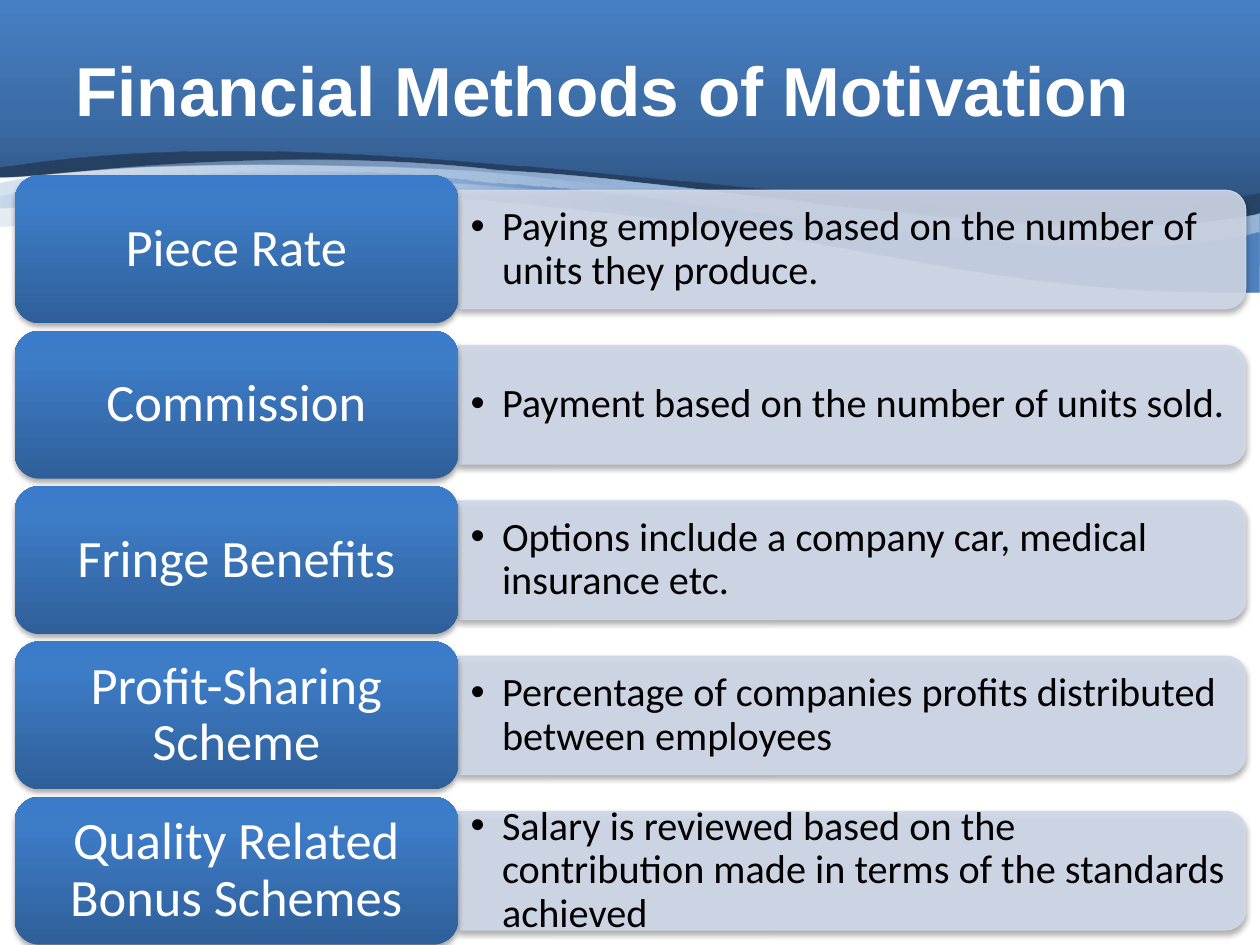
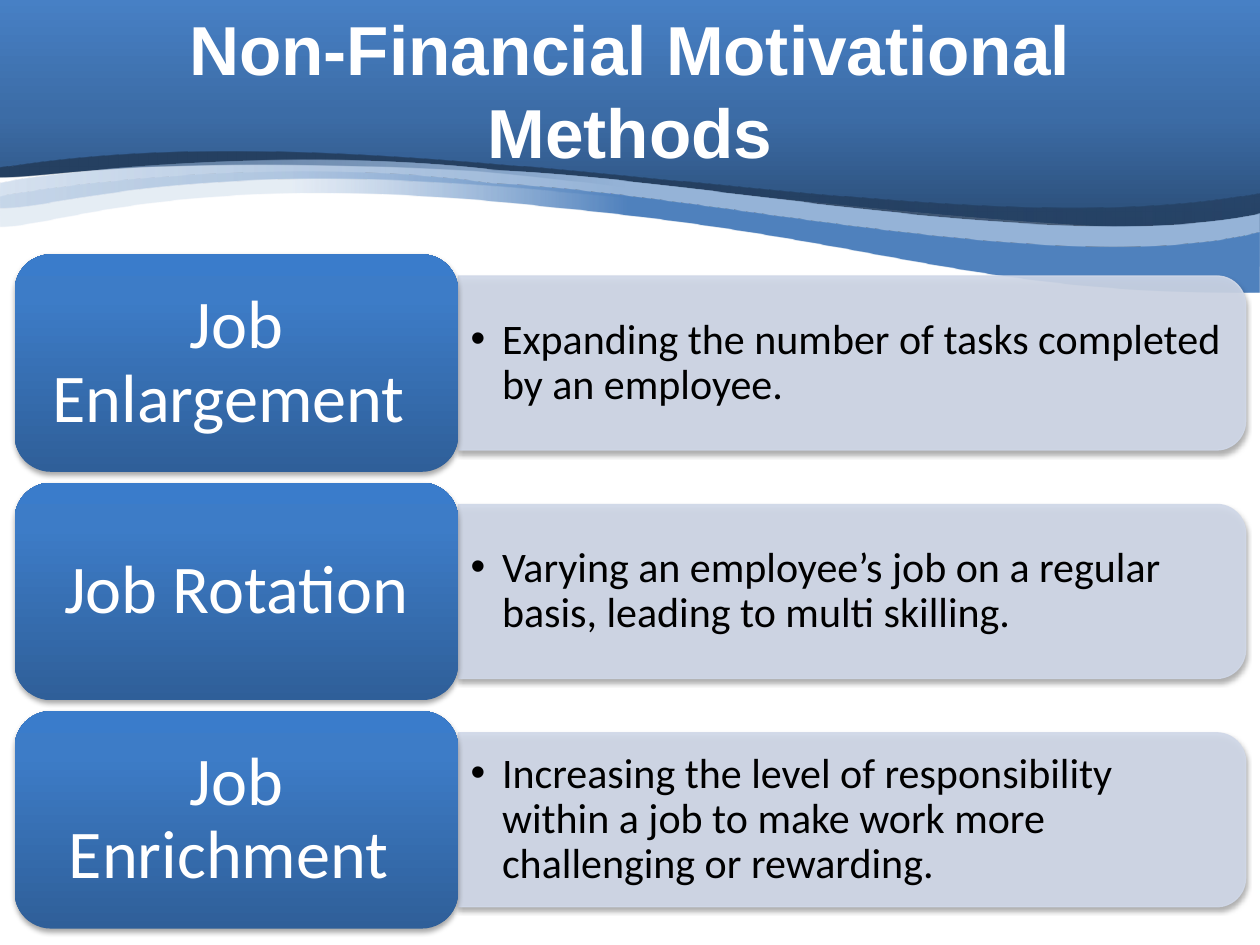
import lxml.etree
import pptx
import pptx.dml.color
import pptx.enum.shapes
import pptx.enum.text
import pptx.oxml.ns
import pptx.util

Pt = pptx.util.Pt
qn = pptx.oxml.ns.qn
MSO = pptx.enum.shapes.MSO_SHAPE
ALIGN = pptx.enum.text.PP_ALIGN

WHITE, BLACK, PALE = "FFFFFF", "000000", "D0D8E8"
LEFT, LABEL_W, PANEL_W = 8.4, 253.4, 450
GLOSS = [(0, "2F5F99", 100), (80, "3D7CC7", 100), (100, "3A7CCB", 100)]

WAVES = [
    ([(-1, -1), (720, -1), (720, 132), (480, 132, 207, 66, -1, 96)],
     [(0, "2A4C75", 100), (50, "3C6CA6", 100), (100, "4780C5", 100)], 270),
    ([(722, 110), (722, 132), (561, 153, 452, 113, 271, 98),
      (87, 88, 34, 101.5, 0, 101.5), (0, 96), (230, 60, 538, 145, 722, 110)],
     [(0, "254061", 75), (50, "254061", 100), (100, "254061", 100)], 180),
    ([(720, 121.7), (720, 152), (557, 153.4, 499, 124, 318, 109.4),
      (109, 88.6, 34, 119.5, 0, 118.8), (0, 118, -0.7, 114, 0, 104.4),
      (33, 98, 166, 83, 282, 97), (402, 102, 608, 146, 720, 121.7)],
     [(0, "95B3D7", 100), (50, "95B3D7", 100), (100, "95B3D7", 38)], 180),
    ([(720, 132.5), (720, 167), (557, 168.5, 499, 135.4, 318, 118.8),
      (109, 95, 34, 129.6, 0, 129.6), (0, 128, -0.7, 124, 0, 112.3),
      (33, 106, 166, 88.6, 282, 105), (402, 110, 608, 160.6, 720, 132.5)],
     [(0, "4F81BD", 100), (50, "4F81BD", 100), (77, "95B3D7", 23)], 180),
]

PAY = [
    ("Piece Rate", "Paying employees based on the number of units they produce."),
    ("Commission", "Payment based on the number of units sold."),
    ("Fringe Benefits", "Options include a company car, medical insurance etc."),
    ("Profit-Sharing Scheme",
     "Percentage of companies profits distributed between employees"),
    ("Quality Related Bonus Schemes",
     "Salary is reviewed based on the contribution made in terms of the "
     "standards achieved"),
]
JOBS = [
    ("Job Enlargement ", "Expanding the number of tasks completed by an employee."),
    ("Job Rotation",
     "Varying an employee’s job on a regular basis, leading to multi skilling."),
    ("Job Enrichment ",
     "Increasing the level of responsibility within a job to make work more "
     "challenging or rewarding."),
]


def hue(code):
    """Turn a hex string into a colour."""
    return pptx.dml.color.RGBColor.from_string(code)


def node(parent, tag, **attrs):
    """Add a drawing element with the given attributes."""
    texts = {key: str(value) for key, value in attrs.items()}
    return lxml.etree.SubElement(parent, qn(tag), texts)


def fade(parent, code, alpha):
    """Add a colour element with its opacity in percent."""
    node(node(parent, "a:srgbClr", val=code), "a:alpha", val=alpha * 1000)


def blend(shape, stops, angle):
    """Fill a shape with a linear gradient and no outline."""
    shape.line.fill.background()
    shape.fill.background()
    props = shape._element.spPr
    grad = lxml.etree.Element(qn("a:gradFill"), rotWithShape="1")
    marks = node(grad, "a:gsLst")
    for place, code, alpha in stops:
        fade(node(marks, "a:gs", pos=place * 1000), code, alpha)
    node(grad, "a:lin", ang=angle * 60000, scaled=0)
    props.replace(props.find(qn("a:noFill")), grad)


def shade(shape):
    """Give a shape a soft shadow below it."""
    shape.shadow.inherit = False
    effect = shape._element.spPr.find(qn("a:effectLst"))
    outer = node(effect, "a:outerShdw", blurRad=Pt(3.1), dist=Pt(1.8),
                 dir=5400000, rotWithShape=0)
    fade(outer, BLACK, 35)


def bend(shape, parts):
    """Turn the six-number parts of a freeform into cubic curves."""
    lines = list(shape._element.spPr.iter(qn("a:lnTo")))
    for line, part in zip(lines, parts):
        if len(part) == 6:
            curve = lxml.etree.Element(qn("a:cubicBezTo"))
            for x, y in zip(part[::2], part[1::2]):
                node(curve, "a:pt", x=Pt(x) - shape.left, y=Pt(y) - shape.top)
            line.getparent().replace(line, curve)


def wave(slide, outline, stops, angle):
    """Draw one wave and return it."""
    first, *parts = outline
    pen = slide.shapes.build_freeform(Pt(first[0]), Pt(first[1]))
    pen.add_line_segments([(Pt(part[-2]), Pt(part[-1])) for part in parts],
                          close=True)
    shape = pen.convert_to_shape()
    bend(shape, parts)
    shape.shadow.inherit = False
    blend(shape, stops, angle)
    return shape


def header(slide):
    """Draw the waves and move them to the layout that the slides share."""
    layout = slide.slide_layout
    for holder in list(layout.placeholders):
        holder._element.getparent().remove(holder._element)
    for shape in [wave(slide, *item) for item in WAVES]:
        layout.shapes._spTree.append(shape._element)


def write(shape, text, size, code, face="Calibri", align=ALIGN.LEFT,
          bold=False, space=None, bullet=False):
    """Put one paragraph, centred in height, into a shape."""
    frame = shape.text_frame
    frame.word_wrap = True
    frame.vertical_anchor = pptx.enum.text.MSO_ANCHOR.MIDDLE
    para = frame.paragraphs[0]
    para.text = text
    para.alignment = align
    para.line_spacing = space
    if bullet:
        props = para._p.get_or_add_pPr()
        props.set("marL", str(Pt(18)))
        props.set("indent", str(-Pt(18)))
        node(props, "a:buFont", typeface="Arial")
        node(props, "a:buChar", char="•")
    font = para.font
    font.name, font.size, font.bold = face, Pt(size), bold
    font.color.rgb = hue(code)


def panel(slide, mid, high, text, size):
    """Draw a pale panel, rounded on the right, with its bullet."""
    left = LEFT + LABEL_W
    shape = slide.shapes.add_shape(
        MSO.ROUND_2_SAME_RECTANGLE, Pt(left + (PANEL_W - high) / 2),
        Pt(mid - PANEL_W / 2), Pt(high), Pt(PANEL_W))
    shape.rotation = 90
    shape.fill.solid()
    shape.fill.fore_color.rgb = hue(PALE)
    shape.line.color.rgb = hue(PALE)
    shape.line.width = Pt(0.75)
    for tint in shape._element.spPr.iter(qn("a:srgbClr")):
        node(tint, "a:alpha", val=90000)
    shade(shape)
    tall = 0.9 * high
    box = slide.shapes.add_textbox(Pt(left), Pt(mid - tall / 2),
                                   Pt(PANEL_W - 0.05 * high), Pt(tall))
    write(box, text, size, BLACK, space=0.9, bullet=True)


def label(slide, top, high, text, size):
    """Draw a glossy blue label."""
    shape = slide.shapes.add_shape(MSO.ROUNDED_RECTANGLE, Pt(LEFT), Pt(top),
                                   Pt(LABEL_W), Pt(high))
    blend(shape, GLOSS, 270)
    shade(shape)
    frame = shape.text_frame
    frame.margin_left = frame.margin_right = Pt(0.3 * size)
    frame.margin_top = frame.margin_bottom = Pt(0.15 * size)
    write(shape, text, size, WHITE, align=ALIGN.CENTER, space=0.9)


def build(slide, title, align, rows, top, high, big, small):
    """Fill a slide with its title and rows of methods."""
    head = slide.shapes.add_textbox(Pt(36), Pt(5.8), Pt(648), Pt(90))
    write(head, title, 39.6, WHITE, face="Arial", align=align, bold=True)
    for row, (name, text) in enumerate(rows):
        y = top + row * 1.05 * high
        panel(slide, y + high / 2, 0.8 * high, text, small)
        label(slide, y, high, name, big)


def main():
    """Build and save the deck."""
    deck = pptx.Presentation()
    deck.slide_width, deck.slide_height = Pt(720), Pt(540)
    blank = deck.slide_layouts[6]
    money = deck.slides.add_slide(blank)
    header(money)
    build(money, "Financial Methods of Motivation", ALIGN.LEFT, PAY,
          100.3, 84.53, 30, 23)
    work = deck.slides.add_slide(blank)
    build(work, "Non-Financial Motivational Methods", ALIGN.CENTER, JOBS,
          145.3, 124.3, 39, 24)
    deck.save("out.pptx")


if __name__ == "__main__":
    main()
